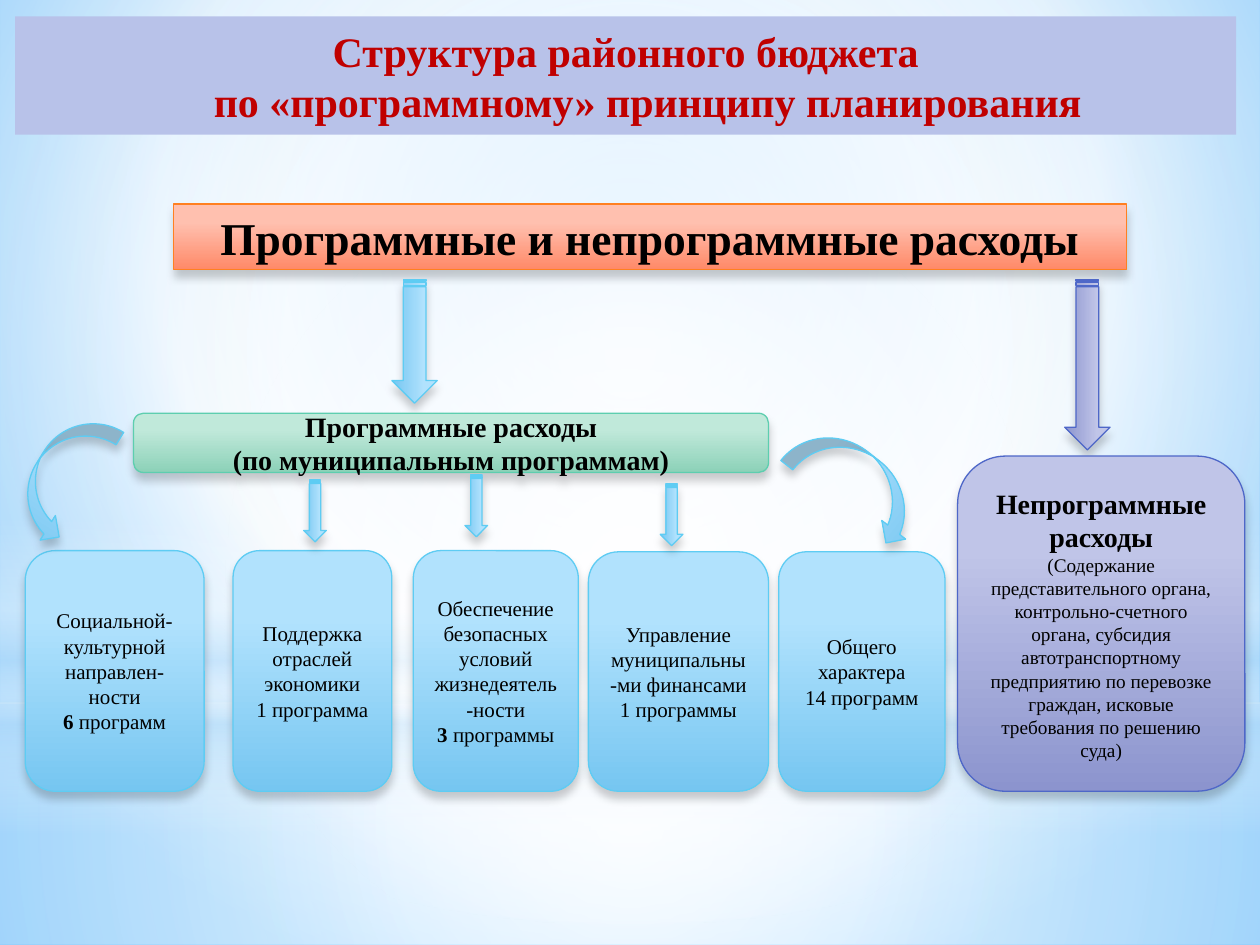
import pptx
import pptx.util
import pptx.dml.color
import pptx.enum.shapes
import pptx.enum.text
import pptx.oxml
import pptx.oxml.ns

Inches = pptx.util.Inches
Pt = pptx.util.Pt
RGBColor = pptx.dml.color.RGBColor
SHAPE = pptx.enum.shapes.MSO_SHAPE

FONT = "Times New Roman"
BLACK = RGBColor(0x00, 0x00, 0x00)
WHITE = RGBColor(0xFF, 0xFF, 0xFF)
RED = RGBColor(0xC0, 0x00, 0x00)
LAVENDER = RGBColor(0xB8, 0xC2, 0xE9)
SKY = RGBColor(0x9E, 0xD5, 0xFF)
AZURE = RGBColor(0x5B, 0xB9, 0xFF)
HAZE = RGBColor(0xB4, 0xDC, 0xFA)

BLUE = (RGBColor(0xB1, 0xE2, 0xFD), RGBColor(0x76, 0xC6, 0xF1), RGBColor(0x5E, 0xCC, 0xF3))
VIOLET = (RGBColor(0xC0, 0xC5, 0xE8), RGBColor(0x8C, 0x94, 0xCE), RGBColor(0x4E, 0x67, 0xC8))
GREEN = (RGBColor(0xC0, 0xE9, 0xDA), RGBColor(0x8C, 0xD1, 0xB8), RGBColor(0x5D, 0xCE, 0xAF))
ORANGE = (RGBColor(0xFF, 0xC0, 0xAF), RGBColor(0xFF, 0x89, 0x68), RGBColor(0xFF, 0x80, 0x21))


def set_gradient(fill, element, stops, focus=None):
    fill.gradient()
    old = element.xpath(".//a:gradFill")[0]
    gs = "".join(
        f'<a:gs pos="{pos * 1000}"><a:srgbClr val="{color}">'
        f'<a:alpha val="{alpha * 1000}"/></a:srgbClr></a:gs>'
        for pos, color, alpha in stops
    )
    if focus:
        sides = " ".join(f'{side}="{v * 1000}"' for side, v in zip("ltrb", focus))
        course = f'<a:path path="circle"><a:fillToRect {sides}/></a:path>'
    else:
        course = '<a:lin ang="5400000" scaled="0"/>'
    new = pptx.oxml.parse_xml(
        f'<a:gradFill {pptx.oxml.ns.nsdecls("a")} rotWithShape="1">'
        f"<a:gsLst>{gs}</a:gsLst>{course}</a:gradFill>"
    )
    old.getparent().replace(old, new)


def add_shape(s, kind, box):
    sp = s.shapes.add_shape(kind, *(Inches(v) for v in box))
    sp.shadow.inherit = False
    sp.line.fill.background()
    return sp


def add_glossy(s, kind, box, theme, rotation=0):
    light, dark, edge = theme
    sp = add_shape(s, kind, box)
    sp.rotation = rotation
    set_gradient(sp.fill, sp.element, [(28, light, 100), (100, dark, 100)])
    sp.line.color.rgb = edge
    sp.line.width = Pt(0.75)
    sp.element.xpath("./p:spPr/a:effectLst")[0].append(pptx.oxml.parse_xml(
        f'<a:outerShdw {pptx.oxml.ns.nsdecls("a")} blurRad="63500" dist="50800" '
        'dir="5400000" rotWithShape="0"><a:srgbClr val="000000">'
        '<a:alpha val="20000"/></a:srgbClr></a:outerShdw>'
    ))
    return sp


def write(sp, paragraphs, color=BLACK):
    tf = sp.text_frame
    tf.word_wrap = True
    tf.vertical_anchor = pptx.enum.text.MSO_ANCHOR.MIDDLE
    for i, runs in enumerate(paragraphs):
        p = tf.add_paragraph() if i else tf.paragraphs[0]
        p.alignment = pptx.enum.text.PP_ALIGN.CENTER
        for text, size, bold in runs:
            p.add_run().text = text
            r = p.runs[-1]
            r.font.name = FONT
            r.font.size = Pt(size)
            r.font.bold = bold
            r.font.color.rgb = color


def add_down_arrow(s, center, top, length, thickness, theme):
    box = (center - length / 2, top + (length - thickness) / 2, length, thickness)
    add_glossy(s, SHAPE.STRIPED_RIGHT_ARROW, box, theme, 90)


def add_backdrop(s, box):
    x, y, w, h = box
    set_gradient(s.background.fill, s.element,
                 [(0, SKY, 100), (60, WHITE, 100), (100, AZURE, 100)], (20, 10, 20, 60))
    center = (50, 50, 50, 50)
    layers = [
        (SHAPE.RECTANGLE, 5.58, h - 5.58, [(0, WHITE, 91), (37, WHITE, 76), (100, HAZE, 79)], center),
        (SHAPE.RECTANGLE, 0, 5.58, [(0, WHITE, 89), (48, WHITE, 62), (100, HAZE, 79)], center),
        (SHAPE.RECTANGLE, 4.12, 2.5, [(0, WHITE, 0), (29, WHITE, 30), (45, HAZE, 40),
                                      (55, WHITE, 26), (65, HAZE, 60), (100, WHITE, 0)], None),
        (SHAPE.OVAL, 1.75, 5.58, [(0, WHITE, 100), (56, WHITE, 0)], center),
    ]
    for kind, top, height, stops, focus in layers:
        sp = add_shape(s, kind, (x, y + top, w, height))
        set_gradient(sp.fill, sp.element, stops, focus)


def add_title(s, box):
    sp = add_shape(s, SHAPE.RECTANGLE, box)
    sp.fill.solid()
    sp.fill.fore_color.rgb = LAVENDER
    write(sp, [[("Структура районного бюджета", 24, True)]], RED)
    p = sp.text_frame.paragraphs[0]
    p.add_line_break()
    r = p.add_run()
    r.text = "по «программному» принципу планирования"
    r.font.name = FONT
    r.font.size = Pt(24)
    r.font.bold = True
    r.font.color.rgb = RED
    pPr = p._p.get_or_add_pPr()
    pPr.set("marL", str(Inches(0.35)))
    pPr.set("indent", str(Inches(-0.35)))


def add_heading(s, box):
    x, y, w, h = box
    sp = add_glossy(s, SHAPE.RECTANGLE, box, ORANGE)
    write(sp, [[("Программные и непрограммные расходы", 26, True)]])
    add_down_arrow(s, x + 1.91, y + 0.6, 0.98, 0.36, BLUE)
    add_down_arrow(s, x + 7.25, y + 0.6, 1.35, 0.36, VIOLET)


def add_program_expenses(s, box):
    x, y, w, h = box
    sp = add_glossy(s, SHAPE.ROUNDED_RECTANGLE, (x + 0.86, y, 5.04, 0.47), GREEN)
    write(sp, [[("Программные расходы", 16, True)],
               [("(по муниципальным программам)", 16, True)]])
    cards = [
        (0, 1.09, 1.42, "Социальной-культурной направлен-ности", [("6", 12, True), (" программ", 12, False)]),
        (1.65, 1.09, 1.26, "Поддержка отраслей экономики", [("1 программа", 12, False)]),
        (3.08, 1.09, 1.31, "Обеспечение безопасных условий жизнедеятель-ности",
         [("3 ", 12, True), ("программы", 12, False)]),
        (4.47, 1.1, 1.43, "Управление муниципальны-ми финансами", [("1 программы", 12, False)]),
        (5.98, 1.1, 1.32, "Общего характера", [("14 программ", 12, False)]),
    ]
    for left, top, width, name, count in cards:
        sp = add_glossy(s, SHAPE.ROUNDED_RECTANGLE, (x + left, y + top, width, h - top), BLUE)
        write(sp, [[(name, 12, False)], count])
    for center, top in ((2.3, 0.53), (3.58, 0.49), (5.13, 0.56)):
        add_down_arrow(s, x + center, y + top, 0.49, 0.18, BLUE)
    add_glossy(s, SHAPE.CURVED_RIGHT_ARROW, (x + 0.07, y - 0.05, 0.46, 1.09), BLUE, 31.7)
    add_glossy(s, SHAPE.CURVED_LEFT_ARROW, (x + 6.37, y - 0.04, 0.48, 1.18), BLUE, 308.1)


def add_other_expenses(s, box):
    sp = add_glossy(s, SHAPE.ROUNDED_RECTANGLE, box, VIOLET)
    write(sp, [
        [("Непрограммные расходы", 16, True)],
        [("(Содержание представительного органа, контрольно-счетного органа, субсидия "
          "автотранспортному предприятию по перевозке граждан, исковые требования "
          "по решению суда)", 11, False)],
    ])


def main():
    prs = pptx.Presentation()
    prs.slide_width = Inches(10)
    prs.slide_height = Inches(7.5)
    s = prs.slides.add_slide(prs.slide_layouts[6])
    add_backdrop(s, (0, 0, 10, 7.5))
    add_title(s, (0.12, 0.13, 9.69, 0.94))
    add_heading(s, (1.38, 1.62, 7.56, 0.52))
    add_other_expenses(s, (7.6, 3.62, 2.28, 2.66))
    add_program_expenses(s, (0.2, 3.28, 7.3, 3))
    prs.save("out.pptx")


if __name__ == "__main__":
    main()
